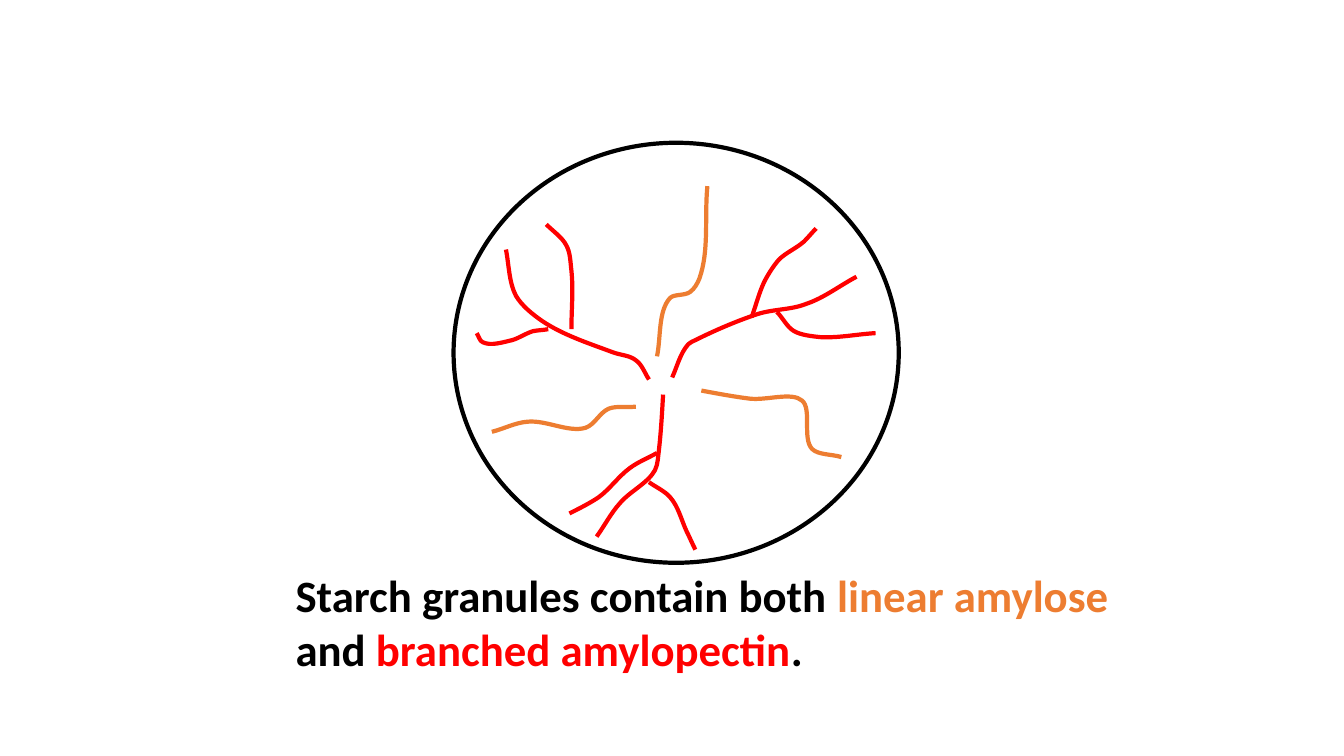
from dataclasses import dataclass

from lxml.etree import SubElement
from pptx import Presentation
from pptx.dml.color import RGBColor
from pptx.enum.shapes import MSO_SHAPE
from pptx.enum.text import MSO_AUTO_SIZE
from pptx.oxml.ns import qn
from pptx.util import Inches, Pt


@dataclass(frozen=True)
class Theme:
    font: str = "Calibri"
    caption_size: int = 32
    line_width: int = 3
    ink: str = "000000"
    amylose: str = "ED7D31"
    amylopectin: str = "FF0000"


THEME = Theme()

# The slide is a grid of 160 columns by 90 rows
COLUMNS, ROWS = 160, 90
CELL = Inches(7.5) / ROWS

# Strands are smooth curves through a few knots on a finer grid in the granule
GRANULE_GRID = (442, 417)
AMYLOPECTIN = [
    # Right branch
    [(217, 233), (233, 200), (240, 196), (302, 170), (350, 160), (400, 133)],
    [(296, 173), (308, 139), (323, 116), (348, 98), (360, 85)],
    [(321, 168), (338, 187), (364, 193), (419, 189)],
    # Left branch
    [(194, 235), (181, 216), (158, 208), (88, 177), (62, 152), (52, 106)],
    [(117, 185), (117, 127), (112, 102), (92, 81)],
    [(94, 185), (79, 187), (58, 196), (29, 198), (23, 189)],
    # Lower branch
    [(208, 250), (204, 304), (200, 325), (165, 358), (142, 391)],
    [(194, 337), (215, 352), (231, 385), (240, 404)],
    [(202, 308), (175, 323), (144, 352), (115, 368)],
]
AMYLOSE = [
    [(181, 262), (154, 264), (131, 283), (73, 277), (38, 287)],
    [(202, 212), (215, 154), (235, 148), (244, 135), (252, 43)],
    [(246, 246), (294, 254), (346, 256), (356, 304), (385, 312)],
]


def grid_box(column, row, columns, rows):
    return [round(cells * CELL) for cells in (column, row, columns, rows)]


def style_outline(shape, color):
    shape.shadow.inherit = False
    shape.fill.background()
    shape.line.color.rgb = RGBColor.from_string(color)
    shape.line.width = Pt(THEME.line_width)


def curve_points(knots):
    """Return the two control points and the end of each curve between knots."""
    places = [complex(*knot) for knot in knots]
    steps = [end - start for start, end in zip(places, places[1:])]
    directions = [step / abs(step) for step in steps]
    # At a knot the curve heads midway between its two neighbouring steps
    headings = [(before + after) / 2 for before, after
                in zip(directions[:1] + directions, directions + directions[-1:])]
    points = []
    for index, step in enumerate(steps):
        reach = abs(step) / 3
        start, end = places[index], places[index + 1]
        points += [start + reach * headings[index], end - reach * headings[index + 1], end]
    return [(point.real, point.imag) for point in points]


def add_strand(shapes, box, knots, color):
    left, top, width, height = box
    scale = (width / GRANULE_GRID[0], height / GRANULE_GRID[1])
    builder = shapes.build_freeform(*knots[0], scale=scale)
    builder.add_line_segments(curve_points(knots), close=False)
    strand = builder.convert_to_shape(left, top)
    # Gather each three line steps into one cubic curve
    outline = strand._element.find(".//" + qn("a:path"))
    steps = outline.findall(qn("a:lnTo"))
    for first in range(0, len(steps), 3):
        curve = SubElement(outline, qn("a:cubicBezTo"))
        for step in steps[first:first + 3]:
            curve.append(step[0])
            outline.remove(step)
    style_outline(strand, color)


def add_granule(slide, box):
    # Granule wall
    style_outline(slide.shapes.add_shape(MSO_SHAPE.OVAL, *box), THEME.ink)
    # One group for each kind of strand
    for strands, color in ((AMYLOPECTIN, THEME.amylopectin), (AMYLOSE, THEME.amylose)):
        group = slide.shapes.add_group_shape()
        for knots in strands:
            add_strand(group.shapes, box, knots, color)


def add_text(paragraph, text, *, color=THEME.ink, size=THEME.caption_size, bold=True):
    run = paragraph.add_run()
    run.text = text
    run.font.name = THEME.font
    run.font.size = Pt(size)
    run.font.bold = bold
    run.font.color.rgb = RGBColor.from_string(color)


def add_caption(slide, box):
    frame = slide.shapes.add_textbox(*box).text_frame
    frame.word_wrap = False
    frame.auto_size = MSO_AUTO_SIZE.SHAPE_TO_FIT_TEXT
    first_line, second_line = frame.paragraphs[0], frame.add_paragraph()
    add_text(first_line, "Starch granules contain both ")
    add_text(first_line, "linear amylose", color=THEME.amylose)
    add_text(second_line, "and ")
    add_text(second_line, "branched amylopectin", color=THEME.amylopectin)
    add_text(second_line, ".")


def main():
    presentation = Presentation()
    presentation.slide_width = round(COLUMNS * CELL)
    presentation.slide_height = round(ROWS * CELL)
    slide = presentation.slides.add_slide(presentation.slide_layouts[6])
    add_granule(slide, grid_box(54, 17, 53, 50))
    add_caption(slide, grid_box(34, 67, 102.75, 14))
    presentation.save("out.pptx")


if __name__ == "__main__":
    main()
